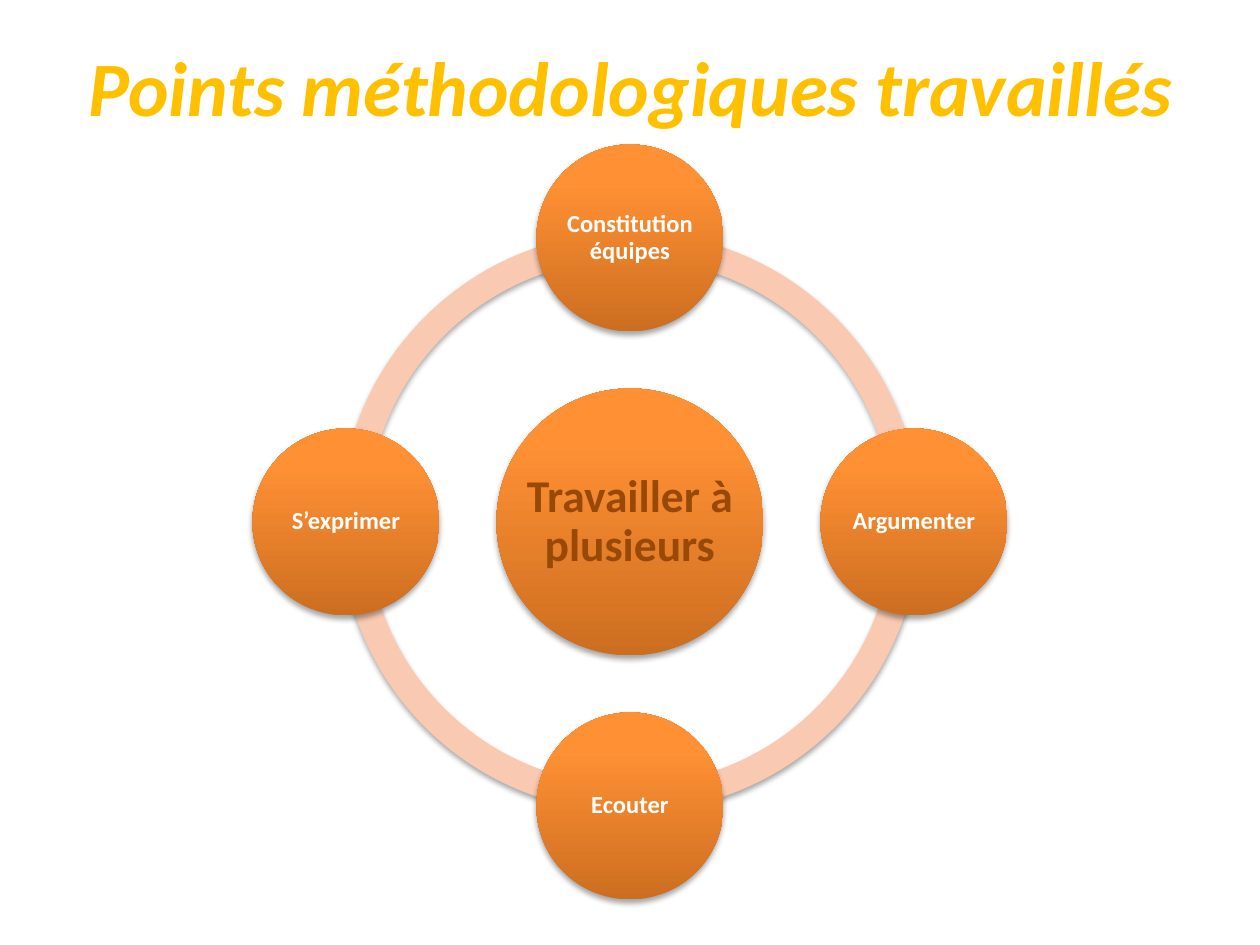
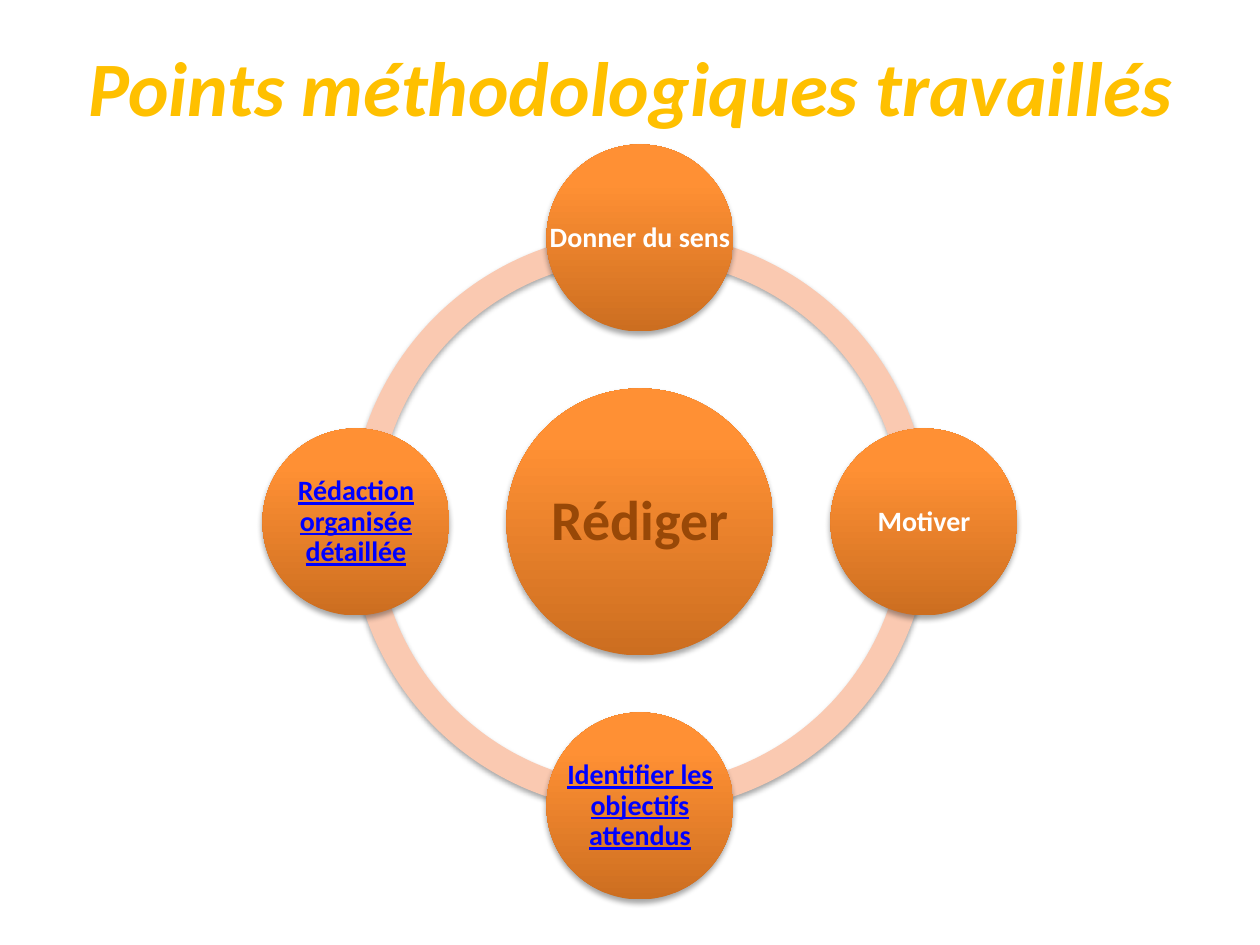
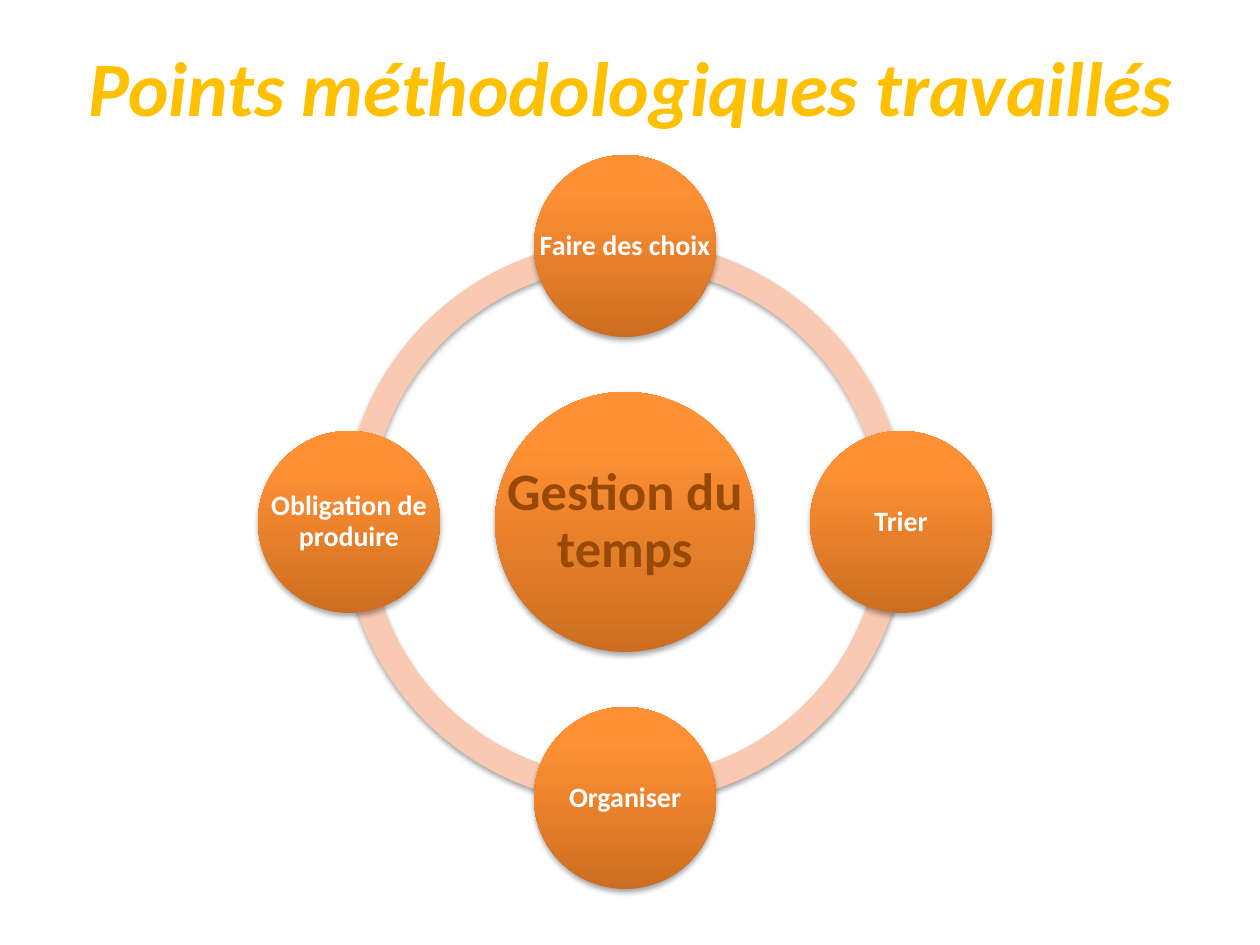
"""Build three hub-and-orbit slides about the working methods practised."""
from copy import deepcopy
from dataclasses import dataclass

from pptx import Presentation
from pptx.dml.color import RGBColor
from pptx.enum.shapes import MSO_SHAPE
from pptx.enum.text import MSO_ANCHOR, PP_ALIGN
from pptx.oxml import parse_xml
from pptx.oxml.ns import nsdecls, qn
from pptx.shapes.autoshape import Shape
from pptx.slide import Slide
from pptx.text.text import TextFrame
from pptx.util import Emu, Pt

BLOCK_ARC, OVAL = MSO_SHAPE.BLOCK_ARC, MSO_SHAPE.OVAL
CENTER, MIDDLE = PP_ALIGN.CENTER, MSO_ANCHOR.MIDDLE
EMU_PER_PX = 914400 / 126
TITLE_ONLY_LAYOUT = 5
TITLE = "Points méthodologiques travaillés"
TITLE_BOX = (64, 26, 1134, 120)
CENTER_Y = 522
HUB_INSET, NODE_INSET = 5, 2
DIRECTIONS = ((0, -1), (1, 0), (0, 1), (-1, 0))
QUARTER_TURN = 54
FULL_TURN = 4 * QUARTER_TURN
RING_THICKNESS = 0.0464


@dataclass(frozen=True)
class Theme:
    """Colours and type sizes shared by the slides."""

    font: str = "Calibri"
    title_color: str = "FFC000"
    hub_color: str = "984807"
    node_color: str = "FFFFFF"
    link_color: str = "0000FF"
    ring_color: str = "FAC9B1"
    disc_stops: tuple[tuple[float, str], ...] = ((0, "CC6E20"), (0.8, "FF9034"), (1, "FF9136"))
    title_size: int = 44


@dataclass(frozen=True)
class Dimensions:
    """Diameters and orbit radius of a wheel, in px."""

    ring: int
    hub: int
    node: int
    orbit: int


@dataclass(frozen=True)
class Node:
    """A label on the orbit, optionally styled as a link."""

    label: str
    linked: bool = False


@dataclass(frozen=True)
class Wheel:
    """A central theme and its nodes, clockwise from the top."""

    hub: str
    hub_size: int
    node_size: int
    center_x: int
    dimensions: Dimensions
    nodes: tuple[Node, ...]


THEME = Theme()
LARGE = Dimensions(ring=580, hub=267, node=187, orbit=284)
SMALL = Dimensions(ring=564, hub=260, node=182, orbit=276)
WHEELS = (
    Wheel("Travailler à plusieurs", 26, 14, 630, LARGE, (
        Node("Constitution équipes"), Node("Argumenter"),
        Node("Ecouter"), Node("S’exprimer"))),
    Wheel("Rédiger", 32, 16, 640, LARGE, (
        Node("Donner du sens"), Node("Motiver"),
        Node("Identifier les objectifs attendus", linked=True),
        Node("Rédaction organisée détaillée", linked=True))),
    Wheel("Gestion du temps", 30, 16, 625, SMALL, (
        Node("Faire des choix"), Node("Trier"),
        Node("Organiser"), Node("Obligation de produire"))),
)


def px(length: float) -> Emu:
    """Convert px to EMU."""
    return Emu(round(length * EMU_PER_PX))


def square(center_x: int, center_y: int, side: int) -> tuple[Emu, Emu, Emu, Emu]:
    """Return left, top, width and height of a centred square."""
    return px(center_x - side / 2), px(center_y - side / 2), px(side), px(side)


def write_text(frame: TextFrame, text: str, *, size: int, color: str,
               italic: bool = False, underline: bool = False,
               line_spacing: float | None = None) -> None:
    """Write one bold, centred paragraph."""
    frame.word_wrap = True
    frame.vertical_anchor = MIDDLE
    paragraph = frame.paragraphs[0]
    paragraph.alignment = CENTER
    paragraph.line_spacing = line_spacing
    run = paragraph.add_run()
    run.text = text
    font = run.font
    font.name, font.size, font.bold = THEME.font, Pt(size), True
    font.italic, font.underline = italic, underline
    font.color.rgb = RGBColor.from_string(color)


def finish_outline(shape: Shape) -> None:
    """Remove the line and add the soft shadow below."""
    shape.line.fill.background()
    shape._element.spPr.append(parse_xml(
        f'<a:effectLst {nsdecls("a")}>'
        '<a:outerShdw blurRad="40000" dist="23000" dir="5400000" rotWithShape="0">'
        '<a:srgbClr val="000000"><a:alpha val="35000"/></a:srgbClr>'
        '</a:outerShdw></a:effectLst>'))


def add_ring(slide: Slide, wheel: Wheel) -> None:
    """Draw the ring as four quarter arcs."""
    for start in range(0, FULL_TURN, QUARTER_TURN):
        arc = slide.shapes.add_shape(
            BLOCK_ARC, *square(wheel.center_x, CENTER_Y, wheel.dimensions.ring))
        arc.adjustments[0] = start
        arc.adjustments[1] = (start + QUARTER_TURN) % FULL_TURN
        arc.adjustments[2] = RING_THICKNESS
        arc.fill.solid()
        arc.fill.fore_color.rgb = RGBColor.from_string(THEME.ring_color)
        finish_outline(arc)


def add_disc(slide: Slide, text: str, center_x: int, center_y: int, diameter: int, *,
             size: int, color: str, inset: int, underline: bool = False) -> None:
    """Draw a gradient disc with a label across its full width."""
    box = square(center_x, center_y, diameter)
    disc = slide.shapes.add_shape(OVAL, *box)
    disc.fill.gradient()
    disc.fill.gradient_angle = 90
    stop_list = disc._element.spPr.find(f"{qn('a:gradFill')}/{qn('a:gsLst')}")
    stop_list.append(deepcopy(stop_list[-1]))
    for stop, (position, stop_color) in zip(disc.fill.gradient_stops, THEME.disc_stops):
        stop.position = position
        stop.color.rgb = RGBColor.from_string(stop_color)
    finish_outline(disc)

    frame = slide.shapes.add_textbox(*box).text_frame
    frame.margin_left = frame.margin_right = px(inset)
    frame.margin_top = frame.margin_bottom = px(inset)
    write_text(frame, text, size=size, color=color, underline=underline, line_spacing=0.9)


def add_title(slide: Slide) -> None:
    """Place and format the shared title."""
    title = slide.shapes.title
    title.left, title.top, title.width, title.height = map(px, TITLE_BOX)
    write_text(title.text_frame, TITLE, size=THEME.title_size,
               color=THEME.title_color, italic=True)


def add_wheel(slide: Slide, wheel: Wheel) -> None:
    """Draw the ring, the hub and the orbiting nodes."""
    dimensions = wheel.dimensions
    add_ring(slide, wheel)
    add_disc(slide, wheel.hub, wheel.center_x, CENTER_Y, dimensions.hub,
             size=wheel.hub_size, color=THEME.hub_color, inset=HUB_INSET)
    for node, (across, down) in zip(wheel.nodes, DIRECTIONS):
        add_disc(slide, node.label,
                 wheel.center_x + across * dimensions.orbit,
                 CENTER_Y + down * dimensions.orbit, dimensions.node,
                 size=wheel.node_size, inset=NODE_INSET, underline=node.linked,
                 color=THEME.link_color if node.linked else THEME.node_color)


def main() -> None:
    """Build and save the presentation."""
    presentation = Presentation()
    presentation.slide_width, presentation.slide_height = px(1260), px(945)
    for wheel in WHEELS:
        slide = presentation.slides.add_slide(presentation.slide_layouts[TITLE_ONLY_LAYOUT])
        add_title(slide)
        add_wheel(slide, wheel)
    presentation.save("out.pptx")


if __name__ == "__main__":
    main()
